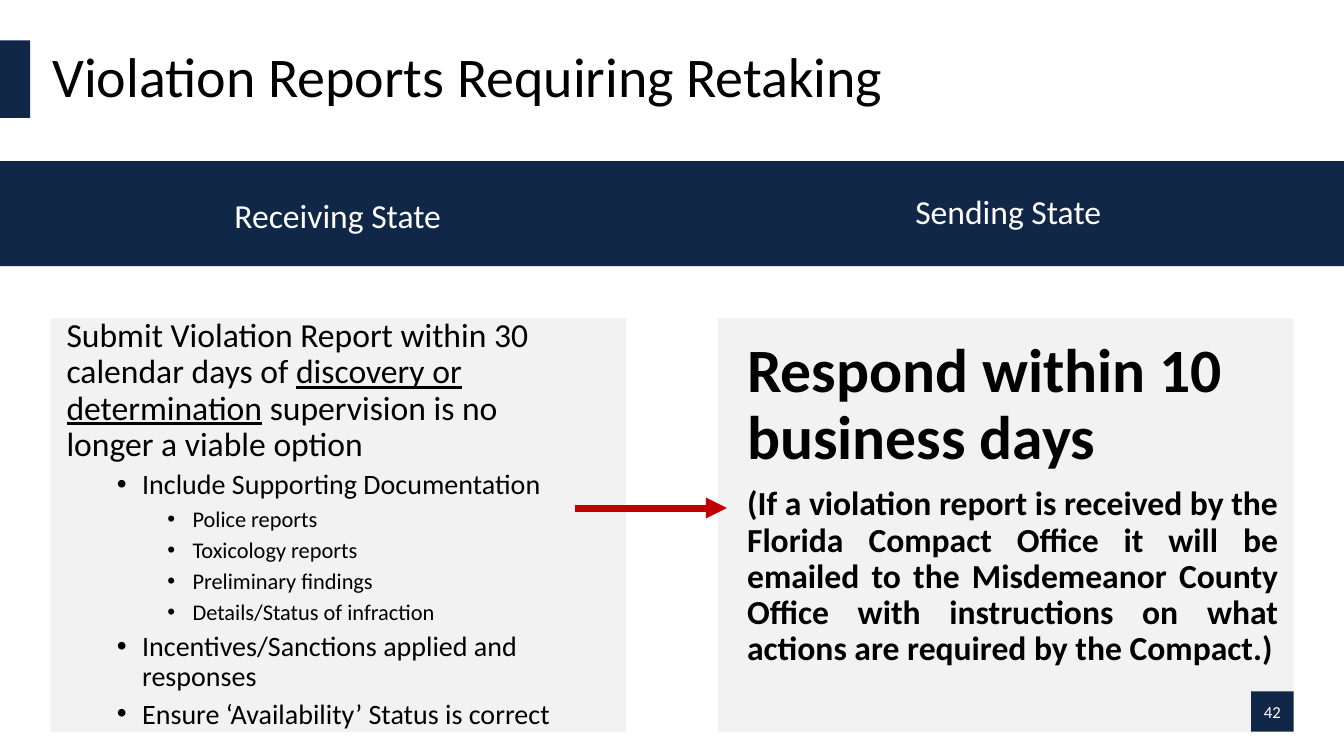
from dataclasses import dataclass

from lxml.etree import SubElement
from pptx import Presentation
from pptx.dml.color import RGBColor
from pptx.enum.shapes import MSO_CONNECTOR, MSO_SHAPE
from pptx.enum.text import MSO_ANCHOR, MSO_AUTO_SIZE, PP_ALIGN
from pptx.oxml.ns import qn
from pptx.util import Inches, Pt


@dataclass(frozen=True)
class Theme:
    font: str = "Calibri"
    navy: RGBColor = RGBColor(0x10, 0x27, 0x47)
    panel: RGBColor = RGBColor(0xF2, 0xF2, 0xF2)
    red: RGBColor = RGBColor(0xC0, 0x00, 0x00)
    black: RGBColor = RGBColor(0, 0, 0)
    white: RGBColor = RGBColor(0xFF, 0xFF, 0xFF)
    title: int = 40
    headline: int = 44
    text: int = 24
    levels: tuple = (24, 20, 16)
    page_number: int = 12
    line_spacing: float = 0.9


THEME = Theme()
WIDTH, HEIGHT = 13.33, 7.5
MARGIN = 0.5
TITLE_TOP, TITLE_HEIGHT = 0.4, 0.77
PANEL_TOP, PANEL_WIDTH, PANEL_HEIGHT = 3.16, 5.71, 4.1
RIGHT_PANEL = WIDTH - MARGIN - PANEL_WIDTH

DUTIES = (
    (1, "Include Supporting Documentation"),
    (2, "Police reports"),
    (2, "Toxicology reports"),
    (2, "Preliminary findings"),
    (2, "Details/Status of infraction"),
    (1, "Incentives/Sanctions applied and responses"),
    (1, "Ensure ‘Availability’ Status is correct"),
)


def place(shape, box):
    shape.left, shape.top, shape.width, shape.height = map(Inches, box)


def prepare_frame(shape, anchor=MSO_ANCHOR.TOP):
    """Give the text frame no insets, wrapping and a fixed size."""
    frame = shape.text_frame
    frame.word_wrap = True
    frame.auto_size = MSO_AUTO_SIZE.NONE
    frame.vertical_anchor = anchor
    frame.margin_left = frame.margin_top = frame.margin_right = frame.margin_bottom = 0
    return frame


def add_span(para, text, size, color=THEME.black, bold=False, underline=False):
    span = para.add_run()
    span.text = text
    span.font.name = THEME.font
    span.font.size = Pt(size)
    span.font.color.rgb = color
    span.font.bold = bold
    span.font.underline = underline


def format_para(para, align=PP_ALIGN.LEFT, before=0, spacing=THEME.line_spacing):
    para.alignment = align
    para.space_before = Pt(before)
    para.line_spacing = spacing


def set_bullet(para, level):
    """Indent by level; level 0 has no bullet."""
    para.level = level
    properties = para._p.get_or_add_pPr()
    properties.set("marL", str(Inches(0.25 + 0.5 * level) if level else 0))
    properties.set("indent", str(Inches(-0.25) if level else 0))
    if level:
        SubElement(properties, qn("a:buFont")).set("typeface", "Arial")
        SubElement(properties, qn("a:buChar")).set("char", "•")
    else:
        SubElement(properties, qn("a:buNone"))


def add_block(page, box, color):
    block = page.shapes.add_shape(MSO_SHAPE.RECTANGLE, *map(Inches, box))
    block.shadow.inherit = False
    block.fill.solid()
    block.fill.fore_color.rgb = color
    block.line.fill.background()
    return block


def add_panel(page, box):
    """Add a grey panel behind everything else on the page."""
    element = add_block(page, box, THEME.panel)._element
    element.getparent().insert(2, element)


def add_title(page, box):
    left, top, width, height = box
    place(page.shapes.title, box)
    para = prepare_frame(page.shapes.title, MSO_ANCHOR.MIDDLE).paragraphs[0]
    format_para(para)
    add_span(para, "Violation Reports Requiring Retaking", THEME.title)
    add_block(page, (0, top, 0.3, height), THEME.navy)


def add_band(page, box):
    left, top, width, height = box
    add_block(page, box, THEME.navy)
    headings = (("Receiving State", 0.94, 0.33, 1.0, 0),
                ("Sending State", 7.59, 0.34, THEME.line_spacing, 10))
    for text, offset, drop, spacing, before in headings:
        label = page.shapes.add_textbox(
            *map(Inches, (left + offset, top + drop, 4.82, 0.4)))
        para = prepare_frame(label).paragraphs[0]
        format_para(para, PP_ALIGN.CENTER, before, spacing)
        add_span(para, text, THEME.text, THEME.white)


def add_receiving(page, body, box):
    left, top, width, height = box
    add_panel(page, box)
    place(body, (left + 0.16, top, width - 0.61, height + 0.53))
    frame = prepare_frame(body)
    intro = frame.paragraphs[0]
    format_para(intro, before=10)
    set_bullet(intro, 0)
    size = THEME.levels[0]
    add_span(intro, "Submit Violation Report within 30 calendar days of ", size)
    add_span(intro, "discovery or determination", size, underline=True)
    add_span(intro, " supervision is no longer a viable option", size)
    for level, text in DUTIES:
        para = frame.add_paragraph()
        format_para(para, before=5)
        set_bullet(para, level)
        add_span(para, text, THEME.levels[level])


def add_sending(page, body, box):
    left, top, width, height = box
    add_panel(page, box)
    place(body, (left + 0.29, top + 0.21, width - 0.44, height - 0.06))
    frame = prepare_frame(body)
    headline, detail = frame.paragraphs[0], frame.add_paragraph()
    for para, align in ((headline, PP_ALIGN.LEFT), (detail, PP_ALIGN.JUSTIFY)):
        format_para(para, align, before=10)
        set_bullet(para, 0)
    add_span(headline, "Respond within 10 business days", THEME.headline, bold=True)
    add_span(detail, "(If a violation report is received by the Florida Compact Office "
             "it will be emailed to the Misdemeanor County Office with instructions on "
             "what actions are required by the Compact.)", THEME.text, bold=True)


def add_page_number(page, box):
    badge = add_block(page, box, THEME.navy)
    para = prepare_frame(badge, MSO_ANCHOR.MIDDLE).paragraphs[0]
    format_para(para, PP_ALIGN.CENTER, spacing=1.0)
    add_span(para, "42", THEME.page_number, THEME.white)


def add_arrow(page, start, end, level):
    arrow = page.shapes.add_connector(
        MSO_CONNECTOR.STRAIGHT, *map(Inches, (start, level, end, level)))
    arrow.line.color.rgb = THEME.red
    arrow.line.width = Pt(5)
    SubElement(arrow.line._get_or_add_ln(), qn("a:tailEnd")).set("type", "triangle")
    SubElement(arrow._element.spPr, qn("a:effectLst"))


def main():
    deck = Presentation()
    deck.slide_width, deck.slide_height = Inches(WIDTH), Inches(HEIGHT)
    two_content = deck.slide_layouts[3]
    page = deck.slides.add_slide(two_content)
    left_body, right_body = page.placeholders[1], page.placeholders[2]
    add_title(page, (0.52, TITLE_TOP, 12.31, TITLE_HEIGHT))
    add_band(page, (0, 1.6, WIDTH, 1.04))
    add_receiving(page, left_body, (MARGIN, PANEL_TOP, PANEL_WIDTH, PANEL_HEIGHT))
    add_sending(page, right_body, (RIGHT_PANEL, PANEL_TOP, PANEL_WIDTH, PANEL_HEIGHT))
    add_page_number(page, (WIDTH - MARGIN - 0.42, 6.86, 0.42, 0.4))
    add_arrow(page, 5.7, 7.21, 5.04)
    deck.save("out.pptx")


if __name__ == "__main__":
    main()
